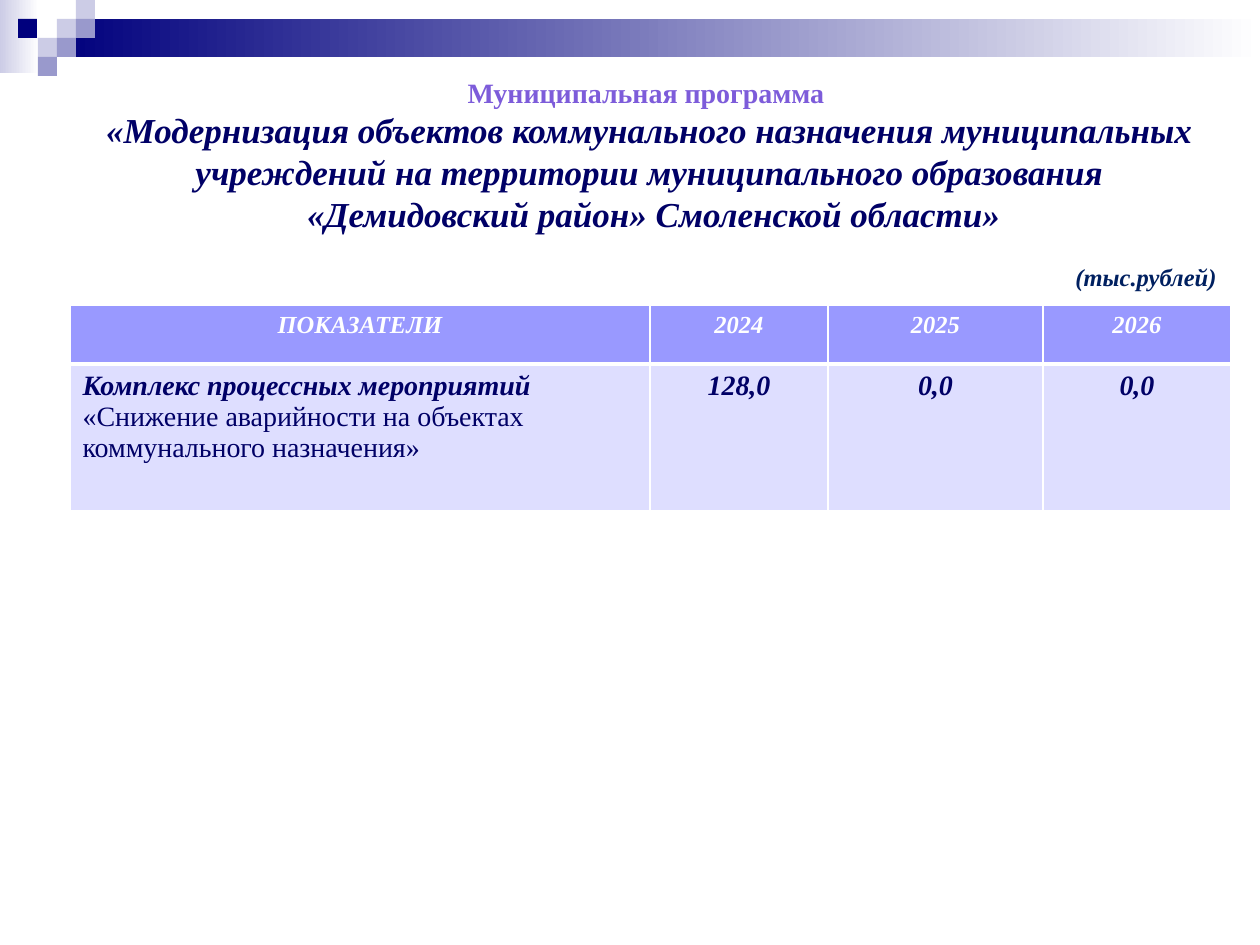
from lxml.etree import SubElement
from pptx import Presentation
from pptx.dml.color import RGBColor
from pptx.enum.shapes import MSO_SHAPE as Shape
from pptx.enum.text import PP_ALIGN as Align
from pptx.oxml.ns import qn
from pptx.util import Pt

EMU_PER_PX = 914400 / 126
FONT = "Times New Roman"
COLORS = {
    "white": "FFFFFF", "navy": "00007D", "pale": "CCCCE6", "mid": "9999CC",
    "violet": "7D5CDA", "ink": "000066", "unit": "002060",
    "header": "9999FF", "body": "DEDEFF",
}


def px(value):
    return round(value * EMU_PER_PX)


def rgb(name):
    return RGBColor.from_string(COLORS[name])


def style_run(run, size, color, bold=True, italic=True):
    font = run.font
    font.name, font.size = FONT, Pt(size)
    font.bold, font.italic = bold, italic
    font.color.rgb = rgb(color)


def add_block(slide, left, top, width, height, *colors):
    shape = slide.shapes.add_shape(
        Shape.RECTANGLE, px(left), px(top), px(width), px(height))
    shape.shadow.inherit = False
    shape.line.fill.background()
    if len(colors) == 1:
        shape.fill.solid()
        shape.fill.fore_color.rgb = rgb(colors[0])
        return
    shape.fill.gradient()
    shape.fill.gradient_angle = 0
    for stop, color in zip(shape.fill.gradient_stops, colors):
        stop.color.rgb = rgb(color)


def add_banner(slide, left, top, width):
    side = 19
    add_block(slide, left, top, 39, 73, "pale", "white")
    add_block(slide, left + 57, top + side, width - 57, 2 * side, "navy", "white")
    squares = [(57, 1, "pale"), (76, 0, "pale"), (76, 1, "mid"), (38, 2, "pale"),
               (18, 1, "navy"), (57, 2, "mid"), (38, 3, "mid")]
    for offset, row, color in squares:
        add_block(slide, left + offset, top + row * side, side, side, color)


def add_text(slide, left, top, width, height, lines, align, wrap=True):
    box = slide.shapes.add_textbox(px(left), px(top), px(width), px(height))
    text_frame = box.text_frame
    text_frame.word_wrap = wrap
    text_frame.text = "\n".join(line[0] for line in lines)
    for paragraph, (_, size, color, italic) in zip(text_frame.paragraphs, lines):
        paragraph.alignment = align
        style_run(paragraph.runs[0], size, color, italic=italic)


def set_borders(cell, widths):
    properties = cell._tc.get_or_add_tcPr()
    for side, width in widths.items():
        line = SubElement(properties, qn(f"a:ln{side}"), w=str(Pt(width)))
        fill = SubElement(line, qn("a:solidFill"))
        SubElement(fill, qn("a:srgbClr"), val=COLORS["white"])


def add_indicators(slide, left, top, columns, rows):
    values = [["ПОКАЗАТЕЛИ", "2024", "2025", "2026"],
              ["Комплекс процессных мероприятий ", "128,0", "0,0", "0,0"]]
    styles = [(14, "white", "header", 3), (16, "ink", "body", 1)]
    table = slide.shapes.add_table(
        len(rows), len(columns), px(left), px(top),
        px(sum(columns)), px(sum(rows))).table
    table.horz_banding = False
    for column, width in zip(table.columns, columns):
        column.width = px(width)
    for r, (size, color, fill, bottom) in enumerate(styles):
        table.rows[r].height = px(rows[r])
        for c, text in enumerate(values[r]):
            cell = table.cell(r, c)
            set_borders(cell, {"L": 1, "R": 1, "T": styles[r - 1][3] if r else 1,
                               "B": bottom})
            cell.fill.solid()
            cell.fill.fore_color.rgb = rgb(fill)
            cell.text_frame.text = text
            paragraph = cell.text_frame.paragraphs[0]
            paragraph.alignment = Align.LEFT if r and not c else Align.CENTER
            style_run(paragraph.runs[0], size, color)
    run = table.cell(1, 0).text_frame.paragraphs[0].add_run()
    run.text = "«Снижение аварийности на объектах коммунального назначения»"
    style_run(run, 16, "ink", bold=False, italic=False)


def main():
    presentation = Presentation()
    presentation.slide_width, presentation.slide_height = px(1260), px(945)
    slide = presentation.slides.add_slide(presentation.slide_layouts[6])
    add_banner(slide, 0, 0, 1260)
    add_text(slide, 39, 69, 1221, 174, [
        ("Муниципальная программа ", 16, "violet", False),
        ("«Модернизация объектов коммунального назначения муниципальных "
         "учреждений на территории муниципального образования", 20, "ink", True),
        (" «Демидовский район» Смоленской области»", 20, "ink", True),
    ], Align.CENTER)
    add_indicators(slide, 70, 305, [580, 178, 215, 188], [59, 147])
    add_text(slide, 1063, 256, 168, 43,
             [("(тыс.рублей)", 14, "unit", True)], Align.LEFT, wrap=False)
    presentation.save("out.pptx")


if __name__ == "__main__":
    main()
